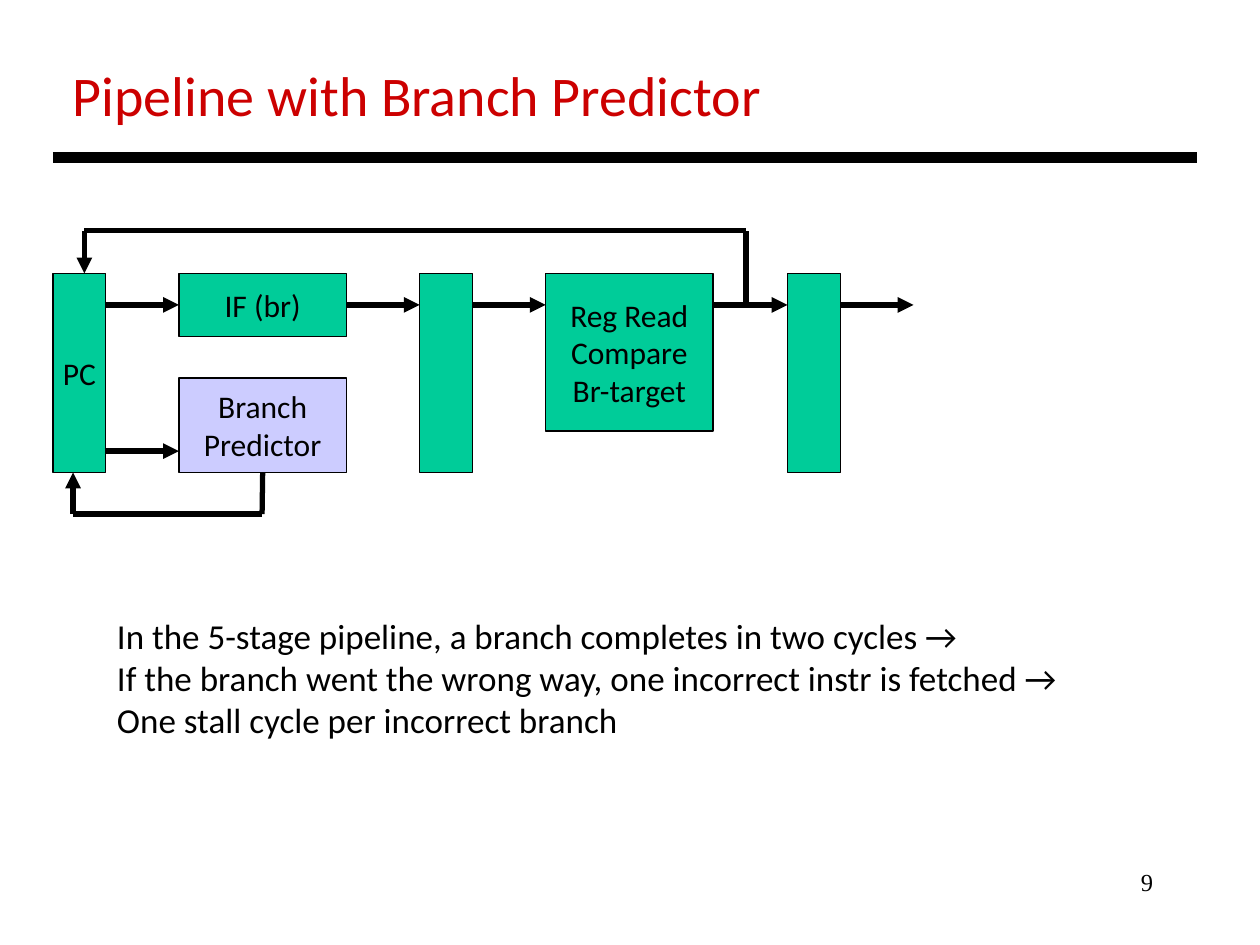
from lxml import etree
from pptx import Presentation
from pptx.dml.color import RGBColor
from pptx.enum import shapes, text
from pptx.oxml.ns import qn
from pptx.util import Inches, Pt

GREEN, LILAC, RED, BLACK = "00CC99", "CCCCFF", "CC0000", "000000"
STAGE_W, LATCH_W, LATCH_H, TOP = 1.33, 0.42, 1.58, 2.17
FLOW_Y, PREDICT_Y = 2.42, 3.58

# name: (left, top, width, height, fill, lines)
BOXES = {
    "pc": (0.42, TOP, LATCH_W, LATCH_H, GREEN, ["PC"]),
    "fetch": (1.42, TOP, STAGE_W, 0.5, GREEN, ["IF (br)"]),
    "predictor": (1.42, 3, STAGE_W, 0.75, LILAC, ["Branch", "Predictor"]),
    "latch 1": (3.33, TOP, LATCH_W, LATCH_H, GREEN, []),
    "decode": (4.33, TOP, STAGE_W, 1.25, GREEN, ["Reg Read", "Compare", "Br-target"]),
    "latch 2": (6.25, TOP, LATCH_W, LATCH_H, GREEN, []),
}

# (points, box joined at the start, box joined at the end); a joint is (name, site)
ROUTES = [
    ([(0.83, FLOW_Y), (1.42, FLOW_Y)], None, ("fetch", 1)),
    ([(2.75, FLOW_Y), (3.33, FLOW_Y)], ("fetch", 3), None),
    ([(3.75, FLOW_Y), (4.33, FLOW_Y)], None, None),
    ([(5.67, FLOW_Y), (6.25, FLOW_Y)], None, None),
    ([(6.67, FLOW_Y), (7.25, FLOW_Y)], None, None),
    ([(0.83, PREDICT_Y), (1.42, PREDICT_Y)], None, None),
    ([(5.92, FLOW_Y), (5.92, 1.83), (0.67, 1.83), (0.67, TOP)], None, None),
    ([(2.08, 3.75), (2.08, 4.08), (0.58, 4.08), (0.58, 3.75)], ("predictor", 2), None),
]

# (left, top, width, height, lines, size, font, colour, alignment, grows)
TEXTS = [
    (0.48, 0.43, 5.72, 0.64, ["Pipeline with Branch Predictor"],
     32, "Calibri", RED, text.PP_ALIGN.LEFT, True),
    (0.83, 4.83, 7.75, 1.11,
     ["In the 5-stage pipeline, a branch completes in two cycles →",
      "If the branch went the wrong way, one incorrect instr is fetched →",
      "One stall cycle per incorrect branch"],
     20, "Calibri", BLACK, text.PP_ALIGN.LEFT, True),
    (7.17, 6.83, 2.08, 0.5, ["9"],
     14, "Times New Roman", BLACK, text.PP_ALIGN.RIGHT, False),
]


def color(value):
    return RGBColor.from_string(value)


def write(tf, lines, size, font, fill, align):
    for i, line in enumerate(lines):
        p = tf.add_paragraph() if i else tf.paragraphs[0]
        p.text = line
        p.alignment = align
        p.font.size = Pt(size)
        p.font.name = font
        p.font.color.rgb = color(fill)


def add_box(slide, left, top, width, height, fill, lines):
    sp = slide.shapes.add_shape(shapes.MSO_SHAPE.RECTANGLE,
                                *map(Inches, (left, top, width, height)))
    sp.shadow.inherit = False
    sp.fill.solid()
    sp.fill.fore_color.rgb = color(fill)
    sp.line.color.rgb = color(BLACK)
    sp.line.width = Pt(0.75)
    tf = sp.text_frame
    tf.word_wrap = False
    tf.vertical_anchor = text.MSO_ANCHOR.MIDDLE
    write(tf, lines, 18, "Calibri", BLACK, text.PP_ALIGN.CENTER)
    return sp


def add_line(slide, start, end, width=3, arrow=False):
    cn = slide.shapes.add_connector(shapes.MSO_CONNECTOR.STRAIGHT,
                                    *map(Inches, (*start, *end)))
    cn.line.color.rgb = color(BLACK)
    cn.line.width = Pt(width)
    if arrow:
        etree.SubElement(cn.line._get_or_add_ln(), qn("a:tailEnd"), type="triangle")
    etree.SubElement(cn._element.spPr, qn("a:effectLst"))
    return cn


def add_route(slide, points, begin, end, boxes):
    """Draw a line through the points, with an arrowhead on its last leg."""
    last = len(points) - 2
    legs = [add_line(slide, a, b, arrow=i == last)
            for i, (a, b) in enumerate(zip(points, points[1:]))]
    if begin:
        legs[0].begin_connect(boxes[begin[0]], begin[1])
    if end:
        legs[-1].end_connect(boxes[end[0]], end[1])


def add_text(slide, left, top, width, height, lines, size, font, fill, align, grows):
    sp = slide.shapes.add_textbox(*map(Inches, (left, top, width, height)))
    tf = sp.text_frame
    tf.word_wrap = not grows
    if grows:
        tf.auto_size = text.MSO_AUTO_SIZE.SHAPE_TO_FIT_TEXT
    write(tf, lines, size, font, fill, align)


def main():
    prs = Presentation()
    prs.slide_width, prs.slide_height = Inches(10), Inches(7.5)
    slide = prs.slides.add_slide(prs.slide_layouts[6])
    add_line(slide, (0.42, 1.25), (9.5, 1.25), width=6)
    boxes = {name: add_box(slide, *box) for name, box in BOXES.items()}
    for route in ROUTES:
        add_route(slide, *route, boxes)
    for item in TEXTS:
        add_text(slide, *item)
    prs.save("out.pptx")


if __name__ == "__main__":
    main()
